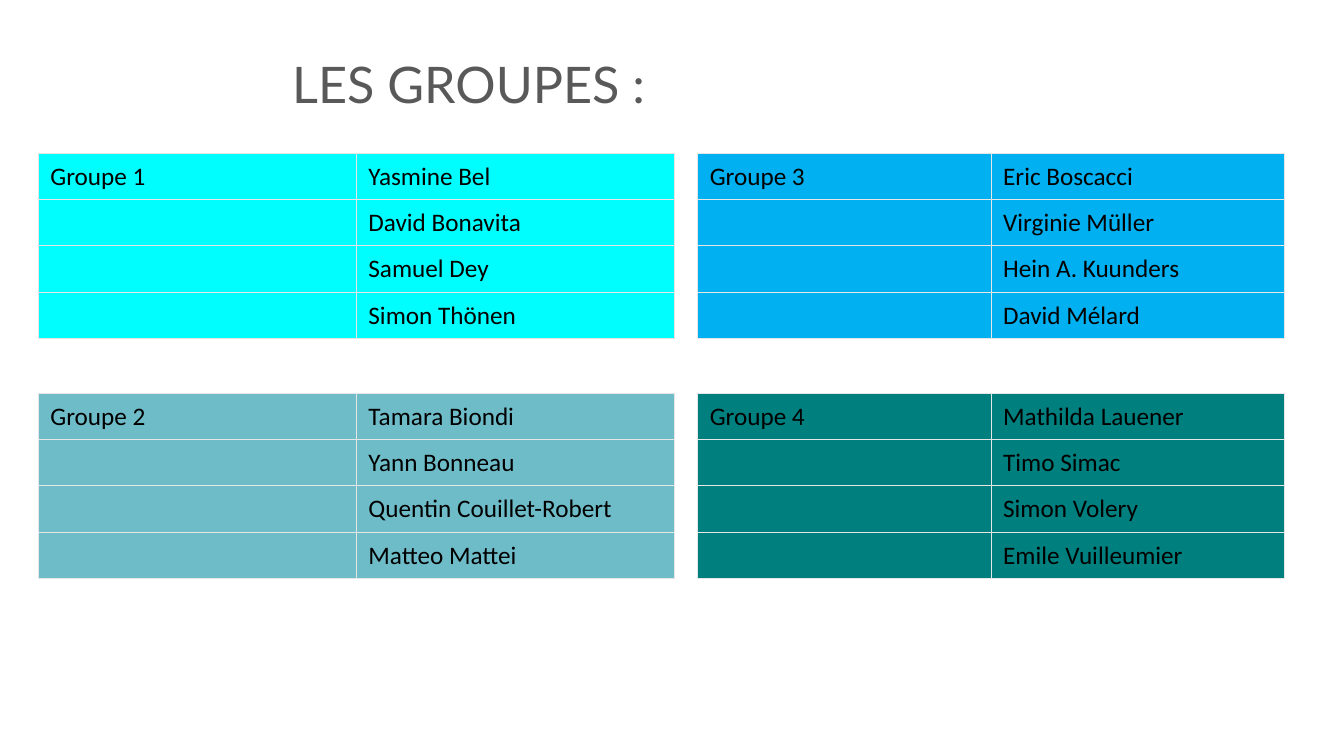
from lxml.etree import SubElement
from pptx import Presentation
from pptx.dml.color import RGBColor
from pptx.enum.text import MSO_ANCHOR
from pptx.oxml.ns import qn
from pptx.util import Inches, Pt

# Left and width of each column of tables, top of each row of tables
COLUMNS = [(0.38, 6.31), (6.92, 5.82)]
TOPS = [1.52, 3.9]
TABLE_HEIGHT = 1.84

# Groups in reading order down each column: name, fill, members
GROUPS = [
    ("Groupe 1", "00FEFE",
     ["Yasmine Bel", "David Bonavita", "Samuel Dey", "Simon Thönen"]),
    ("Groupe 2", "6FBCC9",
     ["Tamara Biondi", "Yann Bonneau", "Quentin Couillet-Robert", "Matteo Mattei"]),
    ("Groupe 3", "00B0F0",
     ["Eric Boscacci", "Virginie Müller", "Hein A. Kuunders", "David Mélard"]),
    ("Groupe 4", "007F7F",
     ["Mathilda Lauener", "Timo Simac", "Simon Volery", "Emile Vuilleumier"]),
]


def rgb(value):
    return RGBColor.from_string(value)


def add_run(p, text, size, font, color):
    r = p.add_run()
    r.text = text
    r.font.size = Pt(size)
    r.font.name = font
    r.font.bold = False
    r.font.color.rgb = rgb(color)


def add_title(s, left, top, width, height):
    box = s.shapes.add_textbox(Inches(left), Inches(top), Inches(width), Inches(height))
    tf = box.text_frame
    tf.word_wrap = True
    tf.vertical_anchor = MSO_ANCHOR.TOP
    p = tf.paragraphs[0]
    p.line_spacing = Pt(34)
    add_run(p, "LES GROUPES :", 36, "Lato", "595959")


def set_borders(cell, color, width):
    tc_pr = cell._tc.get_or_add_tcPr()
    for side in ("lnL", "lnR", "lnT", "lnB"):
        ln = SubElement(tc_pr, qn(f"a:{side}"), w=str(Pt(width)))
        fill = SubElement(ln, qn("a:solidFill"))
        SubElement(fill, qn("a:srgbClr"), val=color)


def fill_cell(cell, text, color):
    cell.margin_left, cell.margin_right = Inches(0.12), Inches(0.08)
    cell.margin_top, cell.margin_bottom = Inches(0.08), Inches(0.07)
    set_borders(cell, "E6E6E6", 0.75)
    cell.fill.solid()
    cell.fill.fore_color.rgb = rgb(color)
    p = cell.text_frame.paragraphs[0]
    p.font.size = Pt(18)
    if text:
        add_run(p, text, 18, "Calibri", "000000")


def add_group(s, left, top, width, height, name, color, members):
    rows = len(members)
    table = s.shapes.add_table(rows, 2, Inches(left), Inches(top),
                               Inches(width), Inches(height)).table
    table.first_row = table.horz_banding = False
    for row, member in enumerate(members):
        table.rows[row].height = Inches(height / rows)
        fill_cell(table.cell(row, 0), name if row == 0 else "", color)
        fill_cell(table.cell(row, 1), member, color)


def main():
    prs = Presentation()
    prs.slide_width, prs.slide_height = Inches(13.33), Inches(7.5)
    s = prs.slides.add_slide(prs.slide_layouts[6])

    # Title
    add_title(s, 2.8, 0.61, 9.38, 0.63)

    # Two by two grid of groups
    for i, group in enumerate(GROUPS):
        left, width = COLUMNS[i // 2]
        add_group(s, left, TOPS[i % 2], width, TABLE_HEIGHT, *group)

    prs.save("out.pptx")


if __name__ == "__main__":
    main()
